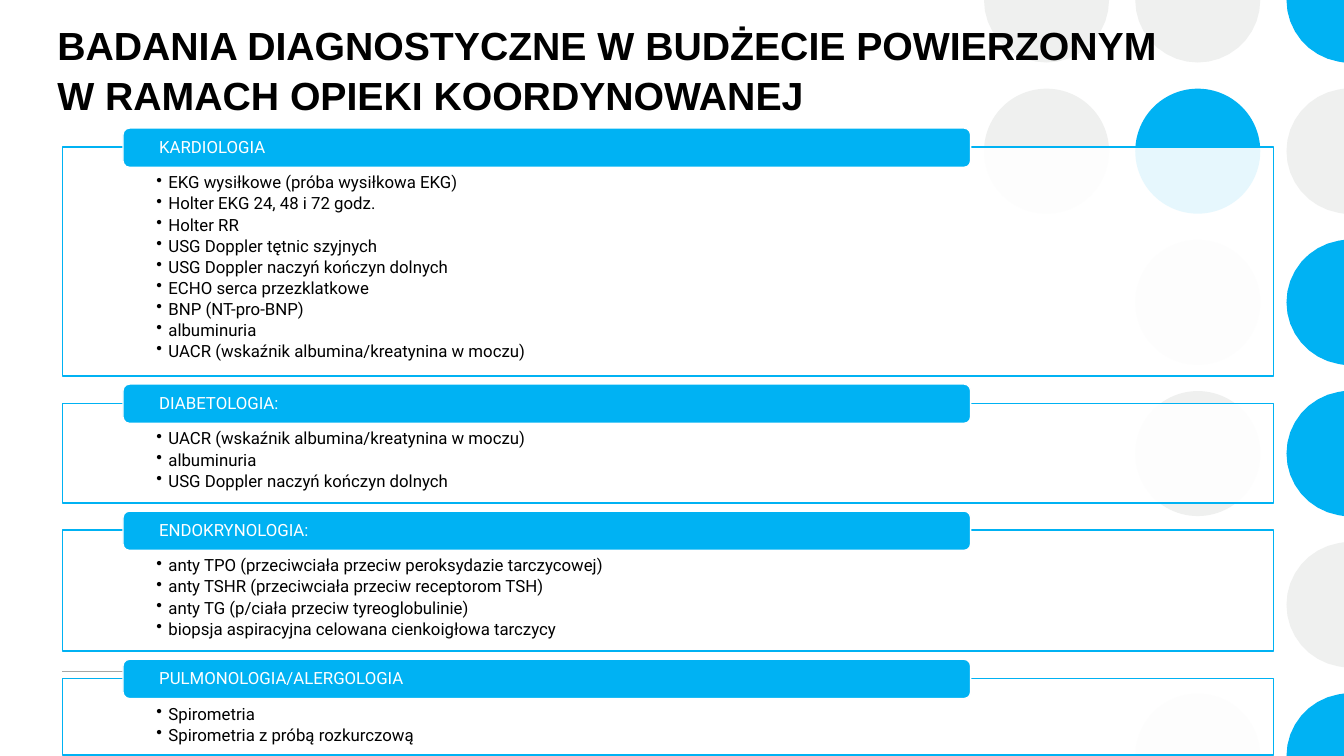
import math
from lxml import etree
from pptx import Presentation
from pptx import util as u
from pptx.dml.color import RGBColor
from pptx.enum import shapes, text
from pptx.oxml import ns

HUES = {"blue": "00B2F3", "pale": "EFF0EF", "white": "FFFFFF",
        "black": "000000", "gray": "A6A6A6"}
WIDE, HIGH = 13.33, 7.5
DOTS = [
    (0, 0, "pale"), (0, 1, "pale"),
    (1, 0, "pale"), (1, 1, "blue"), (1, 2, "pale"), (1, 3, "pale"), (1, 5, "pale"),
    (2, 0, "blue"), (2, 1, "pale"), (2, 2, "blue"), (2, 3, "blue"),
    (2, 4, "pale"), (2, 5, "blue"),
]
TITLE = ["BADANIA DIAGNOSTYCZNE W BUDŻECIE POWIERZONYM",
         "W RAMACH OPIEKI KOORDYNOWANEJ"]
PANELS = [
    ("KARDIOLOGIA", 2.27, [
        "EKG wysiłkowe (próba wysiłkowa EKG)",
        "Holter EKG 24, 48 i 72 godz.",
        "Holter RR",
        "USG Doppler tętnic szyjnych",
        "USG Doppler naczyń kończyn dolnych",
        "ECHO serca przezklatkowe",
        "BNP (NT-pro-BNP)",
        "albuminuria",
        "UACR (wskaźnik albumina/kreatynina w moczu)"]),
    ("DIABETOLOGIA:", 0.99, [
        "UACR (wskaźnik albumina/kreatynina w moczu)",
        "albuminuria",
        "USG Doppler naczyń kończyn dolnych"]),
    ("ENDOKRYNOLOGIA:", 1.2, [
        "anty TPO (przeciwciała przeciw peroksydazie tarczycowej)",
        "anty TSHR (przeciwciała przeciw receptorom TSH)",
        "anty TG (p/ciała przeciw tyreoglobulinie)",
        "biopsja aspiracyjna celowana cienkoigłowa tarczycy"]),
    ("PULMONOLOGIA/ALERGOLOGIA", 0.76, [
        "Spirometria",
        "Spirometria z próbą rozkurczową"]),
]


def hue(name):
    return RGBColor.from_string(HUES[name])


def paint(shape, fill, line=None):
    shape.shadow.inherit = False
    shape.fill.solid()
    shape.fill.fore_color.rgb = hue(fill)
    if line:
        shape.line.color.rgb = hue(line)
        shape.line.width = u.Pt(1)
    else:
        shape.line.fill.background()


def frame(shape, left, top, right, low, anchor):
    body = shape.text_frame
    body.word_wrap = True
    body.margin_left, body.margin_right = u.Inches(left), u.Inches(right)
    body.margin_top, body.margin_bottom = u.Inches(top), u.Inches(low)
    body.vertical_anchor = anchor
    return body


def write(para, words, size, font, color, bold=False):
    para.alignment = text.PP_ALIGN.LEFT
    run = para.add_run()
    run.text = words
    run.font.size = u.Pt(size)
    run.font.name = font
    run.font.bold = bold
    run.font.color.rgb = hue(color)


def bullet(para):
    props = para._p.get_or_add_pPr()
    props.set("marL", str(u.Inches(0.12)))
    props.set("indent", str(u.Inches(-0.12)))
    mark = etree.SubElement(props, ns.qn("a:buChar"))
    mark.set("char", "•")


def clip(left, top, size):
    rad, slack = size / 2, 0.06
    edge = []
    for deg in range(0, 360, 10):
        turn = math.radians(deg)
        x = left + rad + rad * math.cos(turn)
        y = top + rad + rad * math.sin(turn)
        past = x > WIDE + slack
        over = y < -slack or y > HIGH + slack
        if past == over:
            edge.append((u.Inches(min(x, WIDE)),
                         u.Inches(min(max(y, 0), HIGH))))
    return list(dict.fromkeys(edge))


def add_dots(slide, left, top, step, size):
    for col, row, color in DOTS:
        x, y = left + col * step, top + row * step
        if y >= 0 and x + size <= WIDE and y + size <= HIGH:
            dot = slide.shapes.add_shape(
                shapes.MSO_SHAPE.OVAL, *map(u.Inches, (x, y, size, size)))
        else:
            edge = clip(x, y, size)
            pen = slide.shapes.build_freeform(*edge[0])
            pen.add_line_segments(edge[1:], close=True)
            dot = pen.convert_to_shape()
        paint(dot, color)


def add_rule(slide, left, top, width):
    rule = slide.shapes.add_connector(
        shapes.MSO_CONNECTOR.STRAIGHT,
        *map(u.Inches, (left, top, left + width, top)))
    rule.line.color.rgb = hue("gray")
    rule.line.width = u.Pt(1)
    etree.SubElement(rule._element.spPr, ns.qn("a:effectLst"))


def add_title(slide, left, top, width, height):
    box = slide.shapes.add_textbox(*map(u.Inches, (left, top, width, height)))
    para = frame(box, 0.1, 0.05, 0.1, 0.05, text.MSO_ANCHOR.TOP).paragraphs[0]
    para.line_spacing = 1.07
    for num, line in enumerate(TITLE):
        if num:
            para.add_line_break()
        write(para, line, 28, "Arial", "black", True)


def add_panel(slide, left, top, width, height, head, items):
    card = slide.shapes.add_shape(
        shapes.MSO_SHAPE.RECTANGLE, *map(u.Inches, (left, top, width, height)))
    paint(card, "white", "blue")
    tint = card._element.spPr.find(".//" + ns.qn("a:srgbClr"))
    etree.SubElement(tint, ns.qn("a:alpha")).set("val", "90000")
    body = frame(card, 0.93, 0.27, 0.93, 0.09, text.MSO_ANCHOR.TOP)
    for num, item in enumerate(items):
        para = body.add_paragraph() if num else body.paragraphs[0]
        para.line_spacing = 0.9
        para.space_after = u.Pt(2.1)
        write(para, item, 12, "Roboto", "black")
        bullet(para)

    tab = slide.shapes.add_shape(
        shapes.MSO_SHAPE.ROUNDED_RECTANGLE,
        *map(u.Inches, (left + 0.6, top - 0.19, width * 0.7, 0.39)))
    paint(tab, "blue", "white")
    para = frame(tab, 0.34, 0, 0.34, 0, text.MSO_ANCHOR.MIDDLE).paragraphs[0]
    para.line_spacing = 0.9
    write(para, head, 12, "Roboto", "white")


def add_panels(slide, left, top, width, gap):
    for head, height, items in PANELS:
        add_panel(slide, left, top, width, height, head, items)
        top += height + gap


def main():
    deck = Presentation()
    deck.slide_width, deck.slide_height = u.Inches(WIDE), u.Inches(HIGH)
    slide = deck.slides.add_slide(deck.slide_layouts[6])
    add_dots(slide, 9.76, -0.62, 1.5, 1.24)
    add_rule(slide, 0.62, 6.66, 8.02)
    add_title(slide, 0.47, 0.13, 11.93, 1.38)
    add_panels(slide, 0.62, 1.46, 12.01, 0.27)
    deck.save("out.pptx")


if __name__ == "__main__":
    main()
